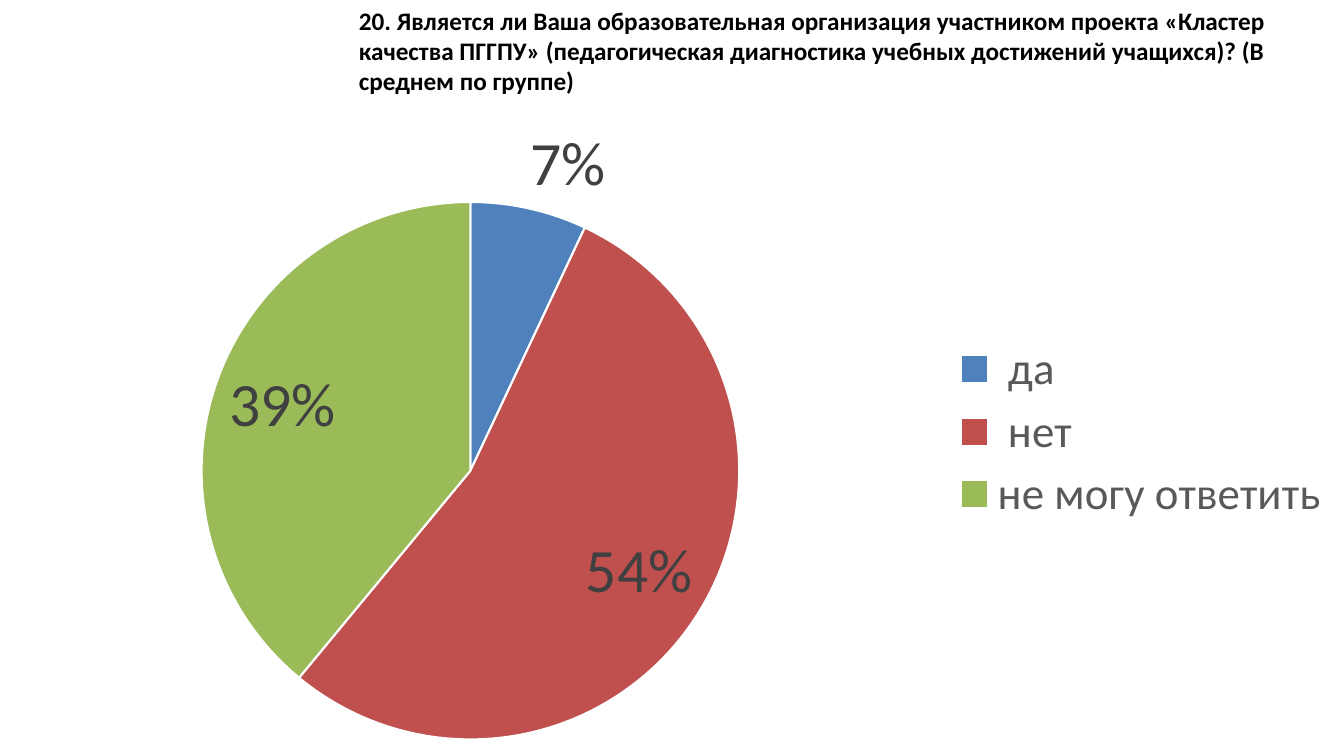
from lxml.etree import SubElement
from pptx import Presentation
from pptx.chart.data import CategoryChartData as Data
from pptx.dml.color import RGBColor as RGB
from pptx.enum.chart import XL_CHART_TYPE as Kind, XL_LABEL_POSITION as Spot
from pptx.enum.chart import XL_LEGEND_POSITION as Side
from pptx.enum.text import MSO_ANCHOR as Anchor, PP_ALIGN as Align
from pptx.oxml.ns import qn
from pptx.util import Inches, Pt

COLORS = {"text": "000000", "label": "404040", "legend": "595959", "edge": "FFFFFF",
          "yes": "4F81BD", "no": "C0504D", "unsure": "9BBB59"}
SHARES = [(" да", 7, "yes"), (" нет", 54, "no"), ("не могу ответить", 39, "unsure")]
TITLE = ("20. Является ли Ваша образовательная организация участником проекта "
         "«Кластер качества ПГГПУ» (педагогическая диагностика учебных достижений "
         "учащихся)? (В среднем по группе)")


class Deck:
    face = "Calibri"

    def __init__(self):
        self.prs = Presentation()
        self.prs.slide_width, self.prs.slide_height = Inches(13.33), Inches(7.5)
        self.slide = self.prs.slides.add_slide(self.prs.slide_layouts[5])

    def style(self, font, size, color, bold=False):
        font.name, font.size, font.bold = self.face, Pt(size), bold
        font.color.rgb = RGB.from_string(COLORS[color])

    def title(self, text, *box):
        shape = self.slide.shapes.title
        shape.left, shape.top, shape.width, shape.height = map(Inches, box)
        frame = shape.text_frame
        frame.word_wrap, frame.vertical_anchor = True, Anchor.TOP
        para = frame.paragraphs[0]
        para.alignment = Align.LEFT
        run = para.add_run()
        run.text = text
        self.style(run.font, 18, "text", True)

    def place(self, node, x, y, w, h, inner=False):
        """Fix a chart part at the given fractions of the chart area."""
        layout = node.find(qn("c:layout"))
        if layout is None:
            layout = SubElement(node, qn("c:layout"))
            anchor = node.find(qn("c:legendPos"))
            if anchor is None:
                node.insert(0, layout)
            else:
                anchor.addnext(layout)
        for old in list(layout):
            layout.remove(old)
        manual = SubElement(layout, qn("c:manualLayout"))
        rules = [("layoutTarget", "inner")] if inner else []
        rules += [("xMode", "edge"), ("yMode", "edge"),
                  ("x", x), ("y", y), ("w", w), ("h", h)]
        for tag, val in rules:
            SubElement(manual, qn("c:" + tag)).set("val", str(val))

    def pie(self, shares, *box):
        data = Data()
        data.categories = [name for name, _, _ in shares]
        data.add_series("Series 1", [val for _, val, _ in shares])
        chart = self.slide.shapes.add_chart(Kind.PIE, *map(Inches, box), data).chart
        self.style(chart.font, 10, "text")
        chart.has_title = False
        plot = chart.plots[0]
        plot.vary_by_categories = True
        for i, (_, _, color) in enumerate(shares):
            part = plot.series[0].points[i].format
            part.fill.solid()
            part.fill.fore_color.rgb = RGB.from_string(COLORS[color])
            part.line.color.rgb = RGB.from_string(COLORS["edge"])
            part.line.width = Pt(1.5)
        labels = plot.series[0].data_labels
        labels.show_percentage, labels.show_value = True, False
        labels.number_format, labels.number_format_is_linked = "0%", False
        labels.position = Spot.BEST_FIT
        self.style(labels.font, 44, "label")
        chart.has_legend = True
        legend = chart.legend
        legend.position, legend.include_in_layout = Side.RIGHT, False
        self.style(legend.font, 32, "legend")
        root = chart.element.find(qn("c:chart"))
        self.place(root.find(qn("c:plotArea")), 0.15, 0.14, 0.4, 0.84, True)
        self.place(root.find(qn("c:legend")), 0.71, 0.35, 0.28, 0.3)


def main():
    deck = Deck()
    deck.title(TITLE, 3.46, 0, 9.87, 1.31)
    deck.pie(SHARES, 0, 1.07, 13.33, 6.43)
    deck.prs.save("out.pptx")


if __name__ == "__main__":
    main()
